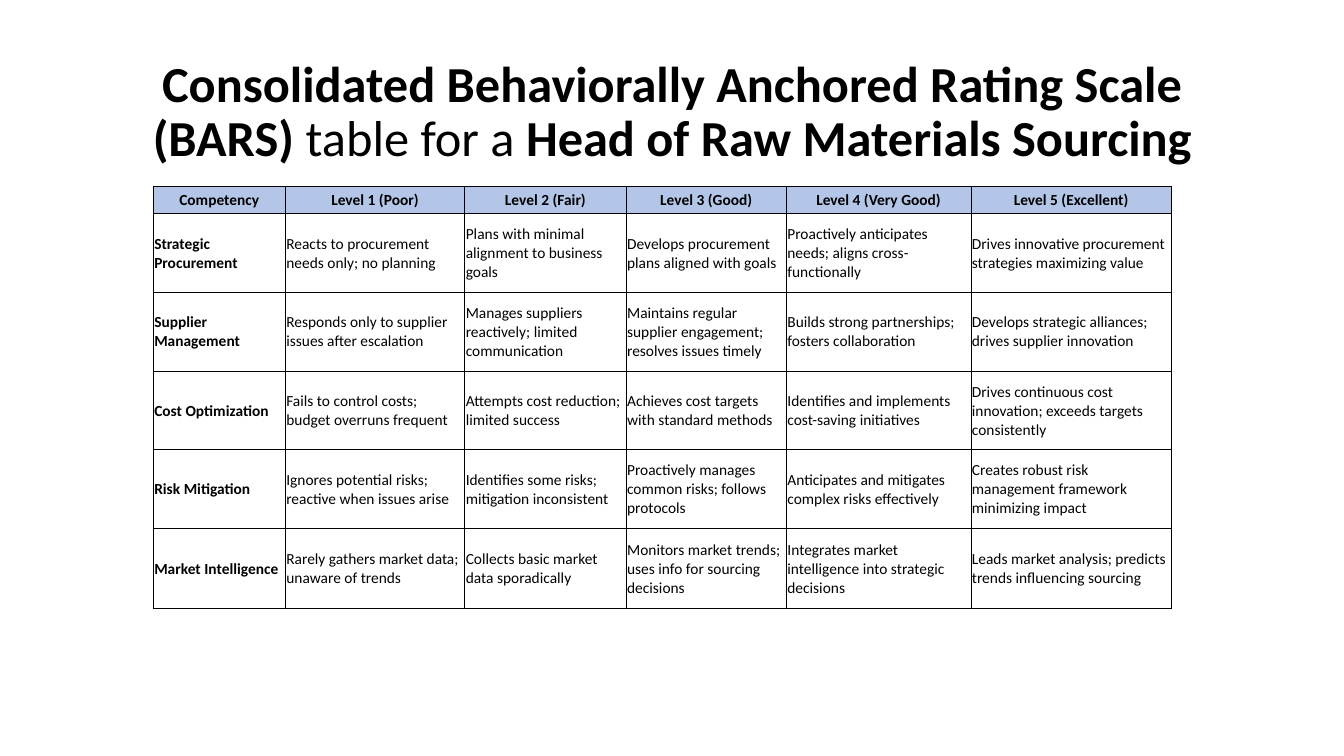
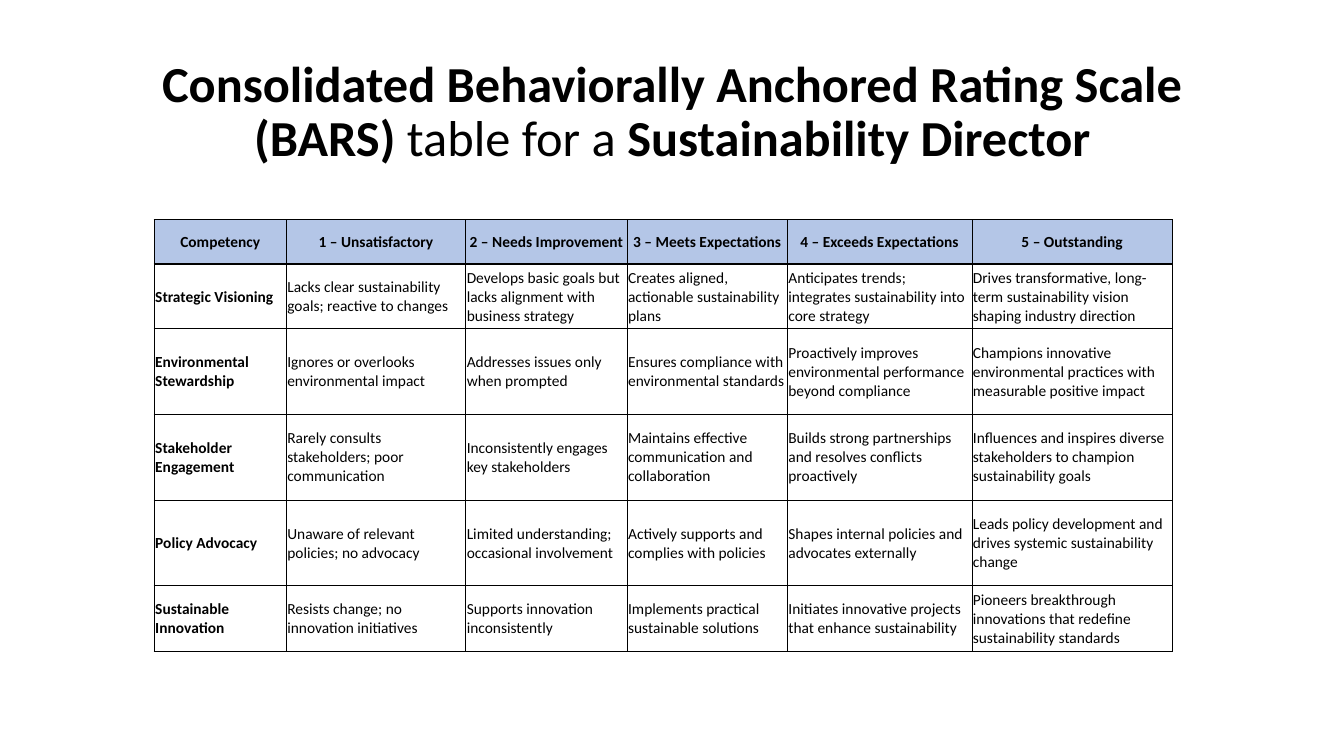
import pptx
import pptx.util
import pptx.dml.color
import pptx.enum.text
import pptx.oxml
import pptx.oxml.ns

Inches = pptx.util.Inches
Pt = pptx.util.Pt
PP_ALIGN = pptx.enum.text.PP_ALIGN
MIDDLE = pptx.enum.text.MSO_ANCHOR.MIDDLE
BLACK = pptx.dml.color.RGBColor(0x00, 0x00, 0x00)
HEADER_BLUE = pptx.dml.color.RGBColor(0xB4, 0xC6, 0xE7)
FONT = "Calibri"
THICK, THIN = Pt(1), Pt(0.5)
COLUMN_WIDTHS = [1.31, 1.78, 1.6, 1.59, 1.83, 1.99]

scales = [
    {
        "role": "Head of Raw Materials Sourcing",
        "left": 1.52,
        "top": 1.85,
        "row_heights": [0.27, 0.78, 0.78, 0.78, 0.78, 0.8],
        "rows": [
            ["Competency", "Level 1 (Poor)", "Level 2 (Fair)", "Level 3 (Good)",
             "Level 4 (Very Good)", "Level 5 (Excellent)"],
            ["Strategic Procurement",
             "Reacts to procurement needs only; no planning",
             "Plans with minimal alignment to business goals",
             "Develops procurement plans aligned with goals",
             "Proactively anticipates needs; aligns cross-functionally",
             "Drives innovative procurement strategies maximizing value"],
            ["Supplier Management",
             "Responds only to supplier issues after escalation",
             "Manages suppliers reactively; limited communication",
             "Maintains regular supplier engagement; resolves issues timely",
             "Builds strong partnerships; fosters collaboration",
             "Develops strategic alliances; drives supplier innovation"],
            ["Cost Optimization",
             "Fails to control costs; budget overruns frequent",
             "Attempts cost reduction; limited success",
             "Achieves cost targets with standard methods",
             "Identifies and implements cost-saving initiatives",
             "Drives continuous cost innovation; exceeds targets consistently"],
            ["Risk Mitigation",
             "Ignores potential risks; reactive when issues arise",
             "Identifies some risks; mitigation inconsistent",
             "Proactively manages common risks; follows protocols",
             "Anticipates and mitigates complex risks effectively",
             "Creates robust risk management framework minimizing impact"],
            ["Market Intelligence",
             "Rarely gathers market data; unaware of trends",
             "Collects basic market data sporadically",
             "Monitors market trends; uses info for sourcing decisions",
             "Integrates market intelligence into strategic decisions",
             "Leads market analysis; predicts trends influencing sourcing"],
        ],
    },
    {
        "role": "Sustainability Director",
        "left": 1.53,
        "top": 2.18,
        "row_heights": [0.44, 0.64, 0.85, 0.85, 0.85, 0.65],
        "rows": [
            ["Competency", "1 – Unsatisfactory", "2 – Needs Improvement",
             "3 – Meets Expectations", "4 – Exceeds Expectations", "5 – Outstanding"],
            ["Strategic Visioning",
             "Lacks clear sustainability goals; reactive to changes",
             "Develops basic goals but lacks alignment with business strategy",
             "Creates aligned, actionable sustainability plans",
             "Anticipates trends; integrates sustainability into core strategy",
             "Drives transformative, long-term sustainability vision shaping industry direction"],
            ["Environmental Stewardship",
             "Ignores or overlooks environmental impact",
             "Addresses issues only when prompted",
             "Ensures compliance with environmental standards",
             "Proactively improves environmental performance beyond compliance",
             "Champions innovative environmental practices with measurable positive impact"],
            ["Stakeholder Engagement",
             "Rarely consults stakeholders; poor communication",
             "Inconsistently engages key stakeholders",
             "Maintains effective communication and collaboration",
             "Builds strong partnerships and resolves conflicts proactively",
             "Influences and inspires diverse stakeholders to champion sustainability goals"],
            ["Policy Advocacy",
             "Unaware of relevant policies; no advocacy",
             "Limited understanding; occasional involvement",
             "Actively supports and complies with policies",
             "Shapes internal policies and advocates externally",
             "Leads policy development and drives systemic sustainability change"],
            ["Sustainable Innovation",
             "Resists change; no innovation initiatives",
             "Supports innovation inconsistently",
             "Implements practical sustainable solutions",
             "Initiates innovative projects that enhance sustainability",
             "Pioneers breakthrough innovations that redefine sustainability standards"],
        ],
    },
]


def style_run(run, size, bold):
    run.font.name = FONT
    run.font.size = Pt(size)
    run.font.bold = bold
    run.font.color.rgb = BLACK


def set_borders(cell, left, right, top, bottom):
    properties = cell._tc.get_or_add_tcPr()
    sides = zip(("lnL", "lnR", "lnT", "lnB"), (left, right, top, bottom))
    for position, (side, is_thick) in enumerate(sides):
        border = pptx.oxml.parse_xml(
            f'<a:{side} {pptx.oxml.ns.nsdecls("a")} w="{THICK if is_thick else THIN}">'
            f'<a:solidFill><a:srgbClr val="{BLACK}"/></a:solidFill></a:{side}>'
        )
        properties.insert(position, border)


deck = pptx.Presentation()
deck.slide_width = Inches(13.33)
deck.slide_height = Inches(7.5)

for scale in scales:
    slide = deck.slides.add_slide(deck.slide_layouts[6])

    title = slide.shapes.add_textbox(
        Inches(0.92), Inches(0.4), Inches(11.5), Inches(1.45)
    ).text_frame
    title.word_wrap = True
    title.vertical_anchor = MIDDLE
    heading = title.paragraphs[0]
    heading.alignment = PP_ALIGN.CENTER
    heading.line_spacing = 0.9
    for text, bold in (
        ("Consolidated Behaviorally Anchored Rating Scale (BARS)", True),
        (" table for a ", False),
        (scale["role"], True),
    ):
        run = heading.add_run()
        run.text = text
        style_run(run, 36, bold)

    rows, row_heights = scale["rows"], scale["row_heights"]
    ratings = slide.shapes.add_table(
        len(rows), len(COLUMN_WIDTHS),
        Inches(scale["left"]), Inches(scale["top"]),
        Inches(sum(COLUMN_WIDTHS)), Inches(sum(row_heights)),
    ).table
    ratings.first_row = False
    ratings.horz_banding = False
    for column, width in zip(ratings.columns, COLUMN_WIDTHS):
        column.width = Inches(width)

    last_row, last_column = len(rows) - 1, len(COLUMN_WIDTHS) - 1
    for r, texts in enumerate(rows):
        ratings.rows[r].height = Inches(row_heights[r])
        for c, text in enumerate(texts):
            cell = ratings.cell(r, c)
            cell.margin_left = cell.margin_right = cell.margin_top = Inches(0.01)
            cell.margin_bottom = 0
            cell.vertical_anchor = MIDDLE
            cell.text_frame.text = text
            paragraph = cell.text_frame.paragraphs[0]
            paragraph.alignment = PP_ALIGN.CENTER if r == 0 else PP_ALIGN.LEFT
            style_run(paragraph.runs[0], 11, r == 0 or c == 0)
            if r == 0:
                cell.fill.solid()
                cell.fill.fore_color.rgb = HEADER_BLUE
            else:
                cell.fill.background()
            set_borders(
                cell,
                left=c <= 1,
                right=c in (0, last_column),
                top=r <= 1,
                bottom=r in (0, last_row),
            )

deck.save("out.pptx")
